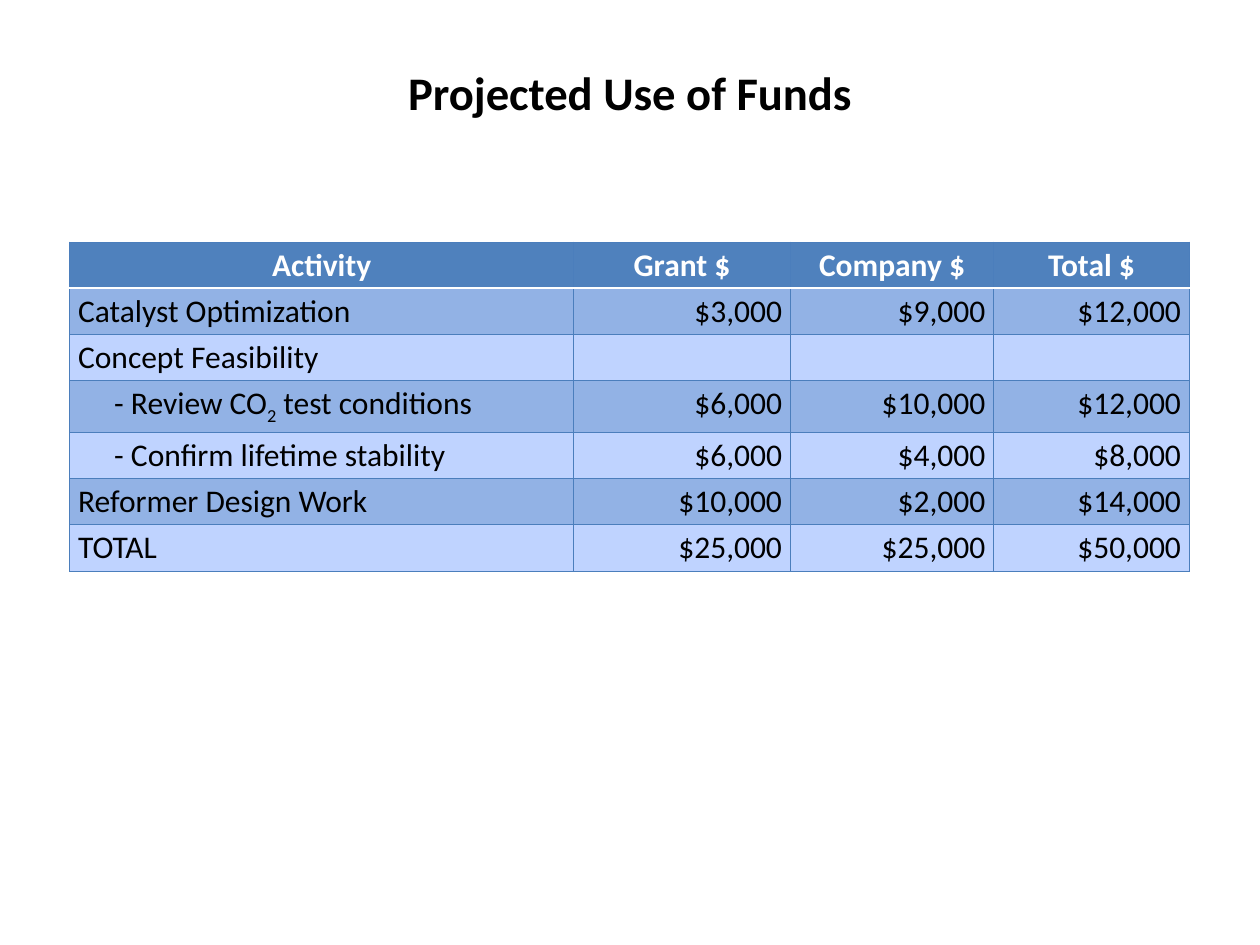
import pptx
import pptx.dml.color
import pptx.enum.text
import pptx.oxml
import pptx.oxml.ns
import pptx.util
from pptx.util import Inches

TITLE = "Projected Use of Funds"
HEADER = ["Activity", "Grant $", "Company $", "Total $"]
# Activity (a tuple marks normal, subscript, normal text), indent level, amounts
ACTIVITIES = [
    ("Catalyst Optimization", 0, ["$3,000", "$9,000", "$12,000"]),
    ("Concept Feasibility", 0, ["", "", ""]),
    (("- Review CO", "2", " test conditions"), 1, ["$6,000", "$10,000", "$12,000"]),
    ("- Confirm lifetime stability", 1, ["$6,000", "$4,000", "$8,000"]),
    ("Reformer Design Work", 0, ["$10,000", "$2,000", "$14,000"]),
    ("TOTAL", 0, ["$25,000", "$25,000", "$50,000"]),
]
COLUMN_WIDTHS = [6, 2.58, 2.42, 2.33]
ROW_HEIGHT = 0.55
CELL_MARGIN, INDENT = 0.1, 0.43
THEME = {
    "font": "Calibri", "title_size": 40, "table_size": 27,
    "text": "000000", "header_text": "FFFFFF", "header_fill": "4F81BD",
    "bands": ["92B2E5", "BFD3FF"],
    "grid": ("4B7EBC", 0.75), "header_rule": ("FFFFFF", 2),
}
ALIGN = pptx.enum.text.PP_ALIGN


def write(para, parts, size, color, bold=False, align=ALIGN.LEFT):
    """Write parts as runs; every second part is a subscript."""
    para.alignment = align
    para.font.size = pptx.util.Pt(size)
    for index, part in enumerate(parts):
        span = para.add_run()
        span.text = part
        span.font.name = THEME["font"]
        span.font.size = pptx.util.Pt(size)
        span.font.bold = bold
        span.font.color.rgb = pptx.dml.color.RGBColor.from_string(color)
        if index % 2:
            span.font._element.set("baseline", "-25000")


def paint_cell(cell, fill, top, bottom):
    """Set borders first, since the schema wants them before the fill."""
    properties = cell._tc.get_or_add_tcPr()
    sides = {"L": THEME["grid"], "R": THEME["grid"], "T": top, "B": bottom}
    for side, (color, width) in sides.items():
        properties.append(pptx.oxml.parse_xml(
            f'<a:ln{side} {pptx.oxml.ns.nsdecls("a")} w="{pptx.util.Pt(width)}">'
            f'<a:solidFill><a:srgbClr val="{color}"/></a:solidFill></a:ln{side}>'))
    cell.fill.solid()
    cell.fill.fore_color.rgb = pptx.dml.color.RGBColor.from_string(fill)


def add_title(page):
    box = page.shapes.add_textbox(Inches(0), Inches(0.71), Inches(15), Inches(0.77))
    box.text_frame.word_wrap = True
    write(box.text_frame.paragraphs[0], [TITLE], THEME["title_size"],
          THEME["text"], True, ALIGN.CENTER)


def add_funds_table(page):
    row_count = len(ACTIVITIES) + 1
    table = page.shapes.add_table(
        row_count, len(HEADER), Inches(0.83), Inches(2.88),
        Inches(sum(COLUMN_WIDTHS)), Inches(ROW_HEIGHT * row_count)).table
    table.first_row = table.horz_banding = False
    for column, width in zip(table.columns, COLUMN_WIDTHS):
        column.width = Inches(width)
    for row in table.rows:
        row.height = Inches(ROW_HEIGHT)

    grid, rule = THEME["grid"], THEME["header_rule"]
    for column, label in enumerate(HEADER):
        cell = table.cell(0, column)
        paint_cell(cell, THEME["header_fill"], grid, rule)
        write(cell.text_frame.paragraphs[0], [label], THEME["table_size"],
              THEME["header_text"], True, ALIGN.CENTER)

    for row, (activity, level, amounts) in enumerate(ACTIVITIES, start=1):
        for column, content in enumerate([activity, *amounts]):
            cell = table.cell(row, column)
            paint_cell(cell, THEME["bands"][(row - 1) % 2], rule if row == 1 else grid, grid)
            parts = [content] if isinstance(content, str) else content
            write(cell.text_frame.paragraphs[0], filter(None, parts), THEME["table_size"],
                  THEME["text"], align=ALIGN.RIGHT if column else ALIGN.LEFT)
        table.cell(row, 0).margin_left = Inches(CELL_MARGIN + level * INDENT)


def main():
    deck = pptx.Presentation()
    deck.slide_width, deck.slide_height = Inches(15), Inches(11.25)
    page = deck.slides.add_slide(deck.slide_layouts[6])
    add_title(page)
    add_funds_table(page)
    deck.save("out.pptx")


if __name__ == "__main__":
    main()
